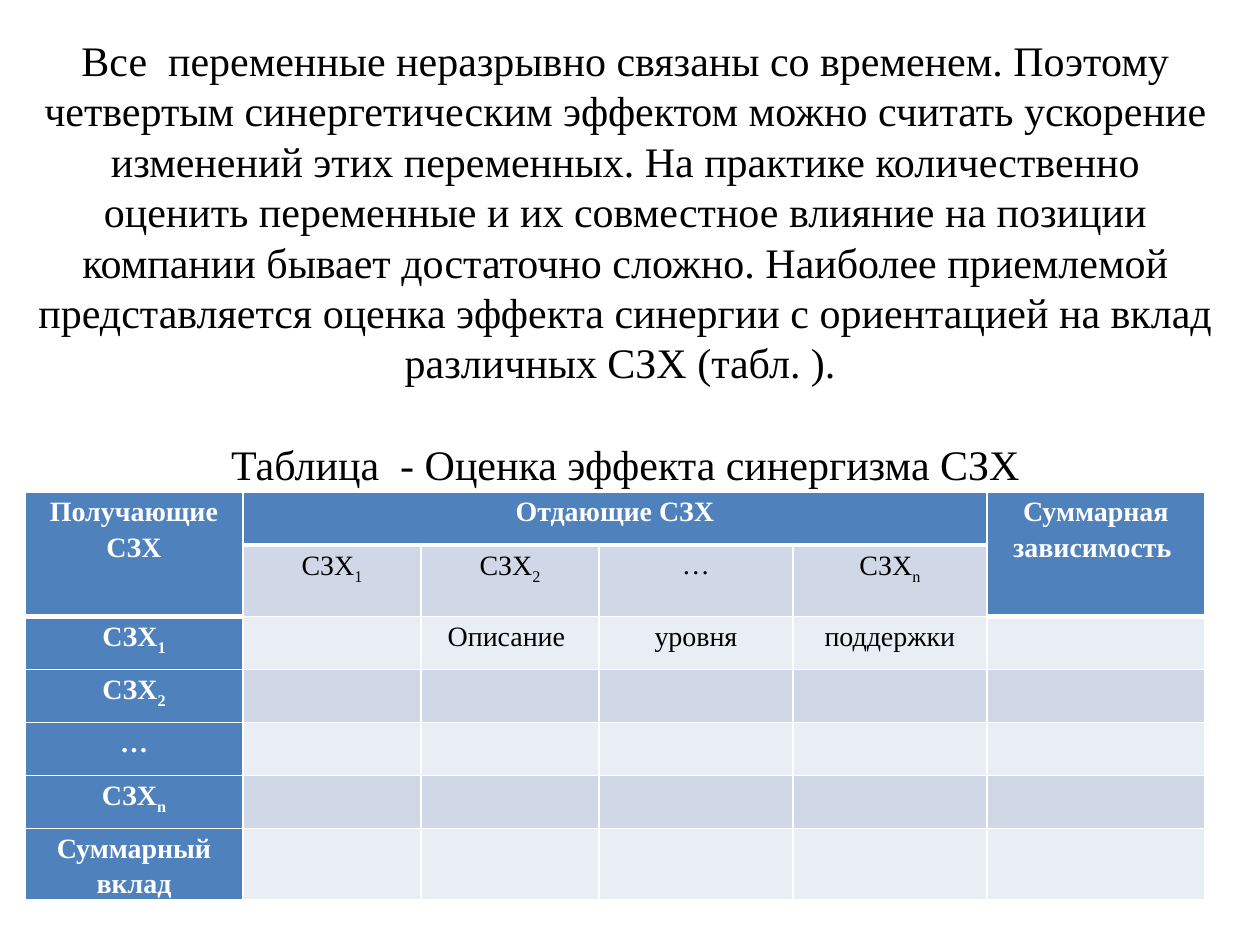
from lxml import etree
from pptx import Presentation
from pptx import util as u
from pptx.dml.color import RGBColor
from pptx.enum import text
from pptx.oxml.ns import qn

PX = u.Inches(1) // 126
FONT = "Times New Roman"
COLORS = {
    "header": "4F81BD",
    "dark_band": "D0D8E8",
    "light_band": "E9EDF4",
    "white": "FFFFFF",
    "black": "000000",
}

INTRO = (
    "Все\u00a0 переменные неразрывно связаны со временем. Поэтому четвертым "
    "синергетическим эффектом можно считать ускорение изменений этих переменных. "
    "На практике количественно оценить переменные и их совместное влияние на позиции "
    "компании бывает достаточно сложно. Наиболее приемлемой представляется оценка "
    "эффекта синергии с ориентацией на вклад различных СЗХ (табл. ). "
)
CAPTION = "Таблица  - Оценка эффекта синергизма СЗХ"

# Each cell is a tuple of its text and, where present, its subscript.
ZONES = [("СЗХ", "1"), ("СЗХ", "2"), ("…",), ("СЗХ", "n")]
EMPTY = ()
ROWS = [
    [("Получающие СЗХ",), ("Отдающие СЗХ",), EMPTY, EMPTY, EMPTY,
     ("Суммарная зависимость ",)],
    [EMPTY, *ZONES, EMPTY],
    [ZONES[0], EMPTY, ("Описание ",), ("уровня",), ("поддержки",), EMPTY],
    *[[zone] + [EMPTY] * 5 for zone in ZONES[1:]],
    [("Суммарный вклад",)] + [EMPTY] * 5,
]
COLUMN_WIDTHS = [218, 178, 178, 194, 194, 218]
ROW_HEIGHT = 53
MERGES = [((0, 0), (1, 0)), ((0, 1), (0, 4)), ((0, 5), (1, 5))]


def is_top_header(row, col):
    return row == 0 or (row == 1 and col in (0, 5))


class SlideBuilder:
    def __init__(self, s):
        self.s = s

    def run(self, p, words, size, color="black", bold=False, subscript=False):
        r = p.add_run()
        r.text = words
        r.font.name = FONT
        r.font.size = u.Pt(size)
        r.font.bold = bold
        r.font.color.rgb = RGBColor.from_string(COLORS[color])
        if subscript:
            r._r.get_or_add_rPr().set("baseline", "-25000")

    def heading(self, x, y, w, h, paragraphs, size, gap):
        """Centred paragraphs with a gap in points between them."""
        sp = self.s.shapes.add_textbox(x * PX, y * PX, w * PX, h * PX)
        tf = sp.text_frame
        tf.word_wrap = True
        tf.auto_size = text.MSO_AUTO_SIZE.TEXT_TO_FIT_SHAPE
        tf.vertical_anchor = text.MSO_ANCHOR.MIDDLE
        for i, words in enumerate(paragraphs):
            p = tf.add_paragraph() if i else tf.paragraphs[0]
            p.alignment = text.PP_ALIGN.CENTER
            p.space_before = u.Pt(gap if i else 0)
            self.run(p, words, size)

    def borders(self, cell, top, bottom):
        """White cell borders; the top and bottom widths are in points."""
        tcPr = cell._tc.get_or_add_tcPr()
        sides = [("lnL", 1), ("lnR", 1), ("lnT", top), ("lnB", bottom)]
        for i, (side, width) in enumerate(sides):
            ln = etree.Element(qn(f"a:{side}"), w=str(u.Pt(width)))
            fill = etree.SubElement(ln, qn("a:solidFill"))
            etree.SubElement(fill, qn("a:srgbClr"), val=COLORS["white"])
            tcPr.insert(i, ln)

    def cell(self, cell, parts, row, col):
        header = is_top_header(row, col) or col == 0
        band = "light_band" if row % 2 == 0 else "dark_band"
        cell.fill.solid()
        cell.fill.fore_color.rgb = RGBColor.from_string(
            COLORS["header" if header else band])
        cell.margin_left = cell.margin_right = 0
        cell.margin_top = cell.margin_bottom = 0
        self.borders(cell,
                     top=3 if row and is_top_header(row - 1, col) else 1,
                     bottom=3 if is_top_header(row, col) else 1)
        if not parts:
            return
        p = cell.text_frame.paragraphs[0]
        p.alignment = text.PP_ALIGN.CENTER
        p.line_spacing = 1.15
        p.space_after = u.Pt(10)
        for i, words in enumerate(parts):
            self.run(p, words, 16, "white" if header else "black", header, i > 0)

    def table(self, x, y, rows, widths, row_height, merges):
        table = self.s.shapes.add_table(
            len(rows), len(widths), x * PX, y * PX,
            sum(widths) * PX, len(rows) * row_height * PX).table
        for column, width in zip(table.columns, widths):
            column.width = width * PX
        for row in table.rows:
            row.height = row_height * PX
        for first, last in merges:
            table.cell(*first).merge(table.cell(*last))
        for i, row in enumerate(rows):
            for j, parts in enumerate(row):
                self.cell(table.cell(i, j), parts, i, j)


def main():
    prs = Presentation()
    prs.slide_width, prs.slide_height = u.Inches(10), u.Inches(7.5)
    slide = SlideBuilder(prs.slides.add_slide(prs.slide_layouts[6]))
    slide.table(25, 492, ROWS, COLUMN_WIDTHS, ROW_HEIGHT, MERGES)
    slide.heading(25, 26, 1201, 471, [INTRO, CAPTION], size=24, gap=29)
    prs.save("out.pptx")


if __name__ == "__main__":
    main()
